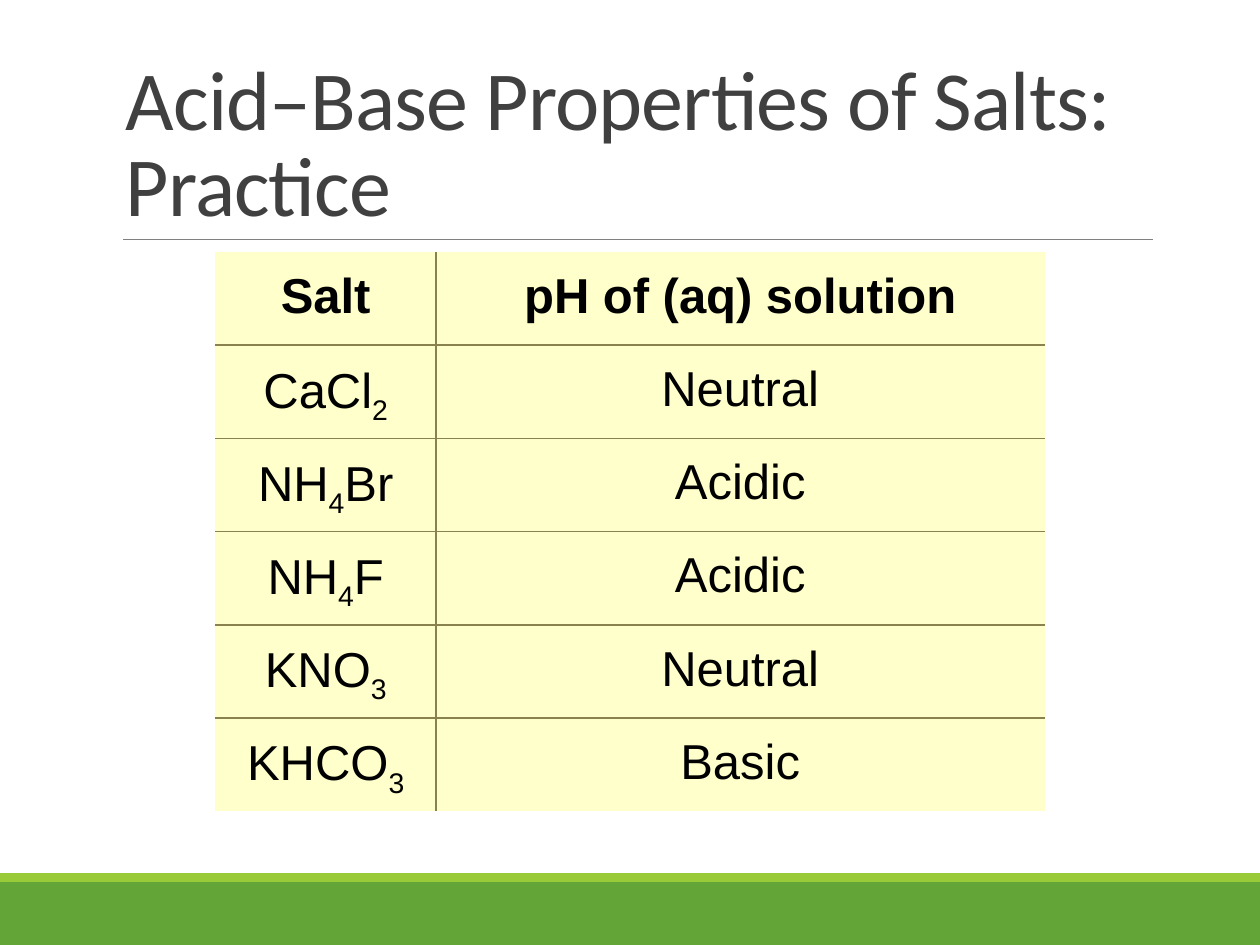
from lxml.etree import SubElement
from pptx import Presentation
from pptx.dml.color import RGBColor
from pptx.enum.shapes import MSO_CONNECTOR, MSO_SHAPE
from pptx.enum.text import MSO_ANCHOR, PP_ALIGN
from pptx.oxml.ns import qn
from pptx.util import Inches, Pt

DARK_GREEN = RGBColor(0x63, 0xA5, 0x37)
LIGHT_GREEN = RGBColor(0x99, 0xCB, 0x38)
RULE_GRAY = RGBColor(0x80, 0x80, 0x80)
TITLE_GRAY = RGBColor(0x40, 0x40, 0x40)
CREAM = RGBColor(0xFF, 0xFF, 0xCC)
OLIVE = RGBColor(0x89, 0x81, 0x4E)
BLACK = RGBColor(0, 0, 0)

HEADINGS = ("Salt", "pH of (aq) solution")
SALTS = (
    (("CaCl", "2"), "Neutral"),
    (("NH", "4", "Br"), "Acidic"),
    (("NH", "4", "F"), "Acidic"),
    (("KNO", "3"), "Neutral"),
    (("KHCO", "3"), "Basic"),
)


def add_band(slide, left, top, width, height, color):
    """Draw one plain coloured band in the given box."""
    band = slide.shapes.add_shape(
        MSO_SHAPE.RECTANGLE, Inches(left), Inches(top), Inches(width), Inches(height)
    )
    band.shadow.inherit = False
    band.fill.solid()
    band.fill.fore_color.rgb = color
    band.line.fill.background()


def add_footer(slide, left, top, width, height):
    """Fill the box with a thin light band above a dark one."""
    accent_height = 0.07
    add_band(slide, left, top + accent_height, width, height - accent_height, DARK_GREEN)
    add_band(slide, left, top, width, accent_height, LIGHT_GREEN)


def add_title(slide, left, top, width, height):
    """Place the title at the bottom of the box, with a rule along its lower edge."""
    right, bottom = Inches(left + width), Inches(top + height)
    rule = slide.shapes.add_connector(
        MSO_CONNECTOR.STRAIGHT, Inches(left + 0.08), bottom, right, bottom
    )
    SubElement(rule._element.spPr, qn("a:effectLst"))
    rule.line.color.rgb = RULE_GRAY
    rule.line.width = Pt(0.5)

    title = slide.shapes.add_textbox(
        Inches(left), Inches(top), Inches(width), Inches(height)
    ).text_frame
    title.word_wrap = True
    title.vertical_anchor = MSO_ANCHOR.BOTTOM
    paragraph = title.paragraphs[0]
    paragraph.line_spacing = 0.85
    paragraph.font.name = "Calibri"
    paragraph.font.size = Pt(48)
    paragraph.font.color.rgb = TITLE_GRAY
    heading = paragraph.add_run()
    heading.text = "Acid–Base Properties of Salts: Practice"
    heading._r.get_or_add_rPr().set("spc", "-50")


def set_borders(cell, inner_sides):
    """Rule the cell on its inner sides and leave its other sides bare."""
    properties = cell._tc.get_or_add_tcPr()
    for index, side in enumerate("LRTB"):
        border = SubElement(properties, qn(f"a:ln{side}"), w=str(Pt(1)))
        if side in inner_sides:
            fill = SubElement(border, qn("a:solidFill"))
            SubElement(fill, qn("a:srgbClr"), val=str(OLIVE))
        else:
            SubElement(border, qn("a:noFill"))
        properties.insert(index, border)


def fill_cell(cell, parts, bold):
    """Write the parts into the cell, with digits as subscripts."""
    cell.fill.solid()
    cell.fill.fore_color.rgb = CREAM
    cell.vertical_anchor = MSO_ANCHOR.MIDDLE
    paragraph = cell.text_frame.paragraphs[0]
    paragraph.alignment = PP_ALIGN.CENTER
    paragraph.line_spacing = 0.9
    paragraph.space_before = Pt(10.1)
    paragraph.font.name = "Arial"
    paragraph.font.size = Pt(28)
    paragraph.font.bold = bold
    paragraph.font.color.rgb = BLACK
    for part in parts:
        run = paragraph.add_run()
        run.text = part
        if part.isdigit():
            run._r.get_or_add_rPr().set("baseline", "-25000")


def add_salt_table(slide, left, top, width, height):
    """Fill the box with the table of salts, ruled on the inside only."""
    rows = [[(heading,) for heading in HEADINGS]]
    rows += [[formula, (ph,)] for formula, ph in SALTS]
    table = slide.shapes.add_table(
        len(rows), len(HEADINGS), Inches(left), Inches(top), Inches(width), Inches(height)
    ).table
    table.first_row = table.horz_banding = False
    salt_width = 1.75
    table.columns[0].width = Inches(salt_width)
    table.columns[1].width = Inches(width - salt_width)
    for row_index, row in enumerate(rows):
        vertical = ("T" if row_index else "") + ("B" if row_index < len(rows) - 1 else "")
        for column_index, parts in enumerate(row):
            cell = table.cell(row_index, column_index)
            fill_cell(cell, parts, bold=row_index == 0)
            set_borders(cell, vertical + "RL"[column_index])


def main():
    """Build the slide and save it."""
    presentation = Presentation()
    presentation.slide_width = Inches(10)
    presentation.slide_height = Inches(7.5)
    slide = presentation.slides.add_slide(presentation.slide_layouts[6])
    add_footer(slide, 0, 6.93, 10, 0.57)
    add_title(slide, 0.9, 0.31, 8.25, 1.59)
    add_salt_table(slide, 1.71, 2, 6.58, 4.44)
    presentation.save("out.pptx")


if __name__ == "__main__":
    main()
